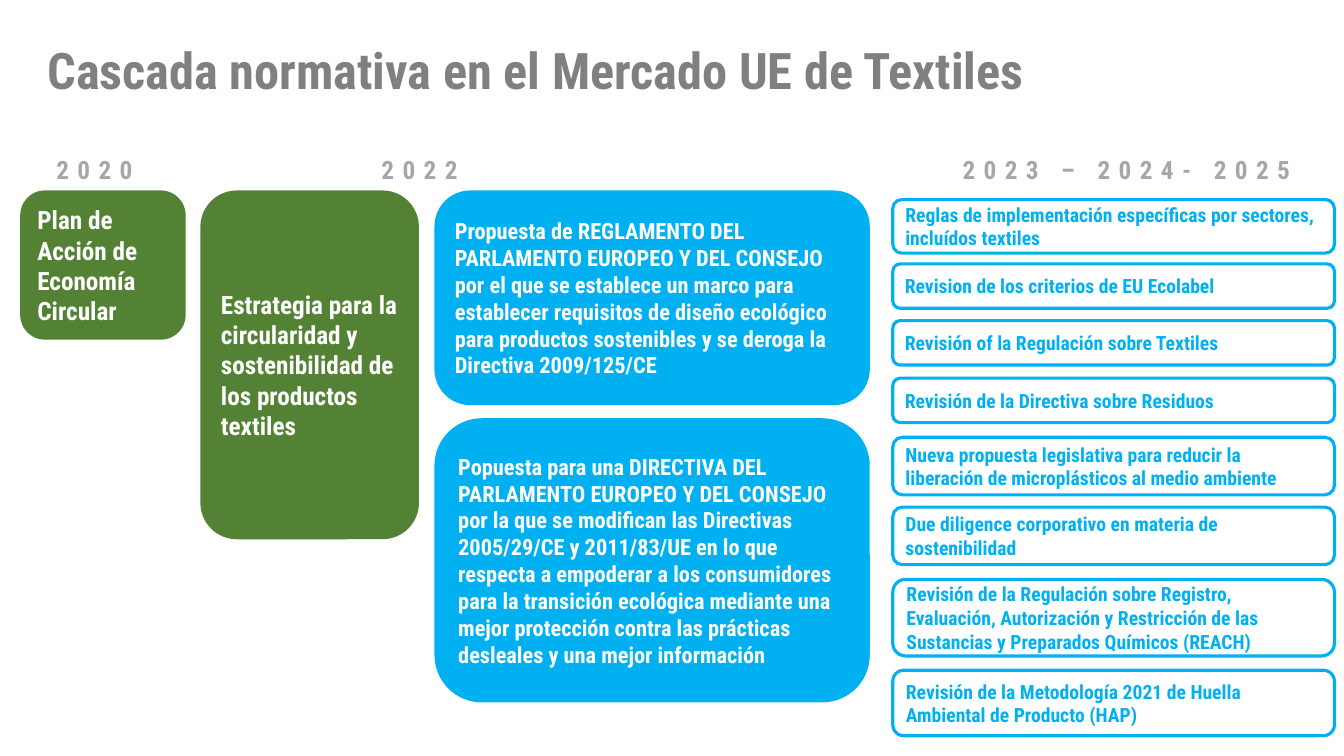
from pptx import Presentation
from pptx.dml.color import RGBColor
from pptx.enum.shapes import MSO_SHAPE as Preset
from pptx.enum.text import MSO_ANCHOR as Anchor, MSO_AUTO_SIZE as AutoSize, PP_ALIGN as Align
from pptx.util import Cm, Pt

FONT = "Roboto Condensed"
WHITE = RGBColor(0xFF, 0xFF, 0xFF)
GREEN = RGBColor(0x54, 0x82, 0x35)
BLUE = RGBColor(0x00, 0xB0, 0xF0)
TITLE_GREY = RGBColor(0x80, 0x80, 0x80)
YEAR_GREY = RGBColor(0xA6, 0xA6, 0xA6)

# Left, top, width and height in centimetres
YEARS = [
    ("2020", (1.17, 3.76, 2.87, 1.02), Align.LEFT),
    ("2022", (9.14, 3.76, 2.87, 1.02), Align.CENTER),
    ("2023 – 2024- 2025", (23.5, 3.76, 9.78, 1.02), Align.CENTER),
]
PLANS = [
    ("Plan de Acción de Economía Circular", (0.51, 4.8, 4.17, 3.76)),
    ("Estrategia para la circularidad y sostenibilidad de los productos textiles",
     (5.05, 4.8, 5.51, 8.79)),
]
PROPOSALS = [
    ("Propuesta de REGLAMENTO DEL PARLAMENTO EUROPEO Y DEL CONSEJO por el que se "
     "establece un marco para establecer requisitos de diseño ecológico para productos "
     "sostenibles y se deroga la Directiva 2009/125/CE", (10.95, 4.8, 10.97, 5.41)),
    ("Popuesta para una DIRECTIVA DEL PARLAMENTO EUROPEO Y DEL CONSEJO por la que se "
     "modifican las Directivas 2005/29/CE y 2011/83/UE en lo que respecta a empoderar a "
     "los consumidores para la transición ecológica mediante una mejor protección contra "
     "las prácticas desleales y una mejor información", (10.95, 10.54, 10.97, 7.16)),
]
# Text, top and height; all share the right-hand column
RULES_LEFT, RULES_WIDTH = 22.5, 11.13
RULES = [
    ("Reglas de implementación específicas por sectores, incluídos textiles", 5.03, 1.35),
    ("Revision de los criterios de EU Ecolabel", 6.65, 1.12),
    ("Revisión of la Regulación sobre Textiles", 8.08, 1.12),
    ("Revisión de la Directiva sobre Residuos", 9.53, 1.12),
    ("Nueva propuesta legislativa para reducir la liberación de microplásticos al medio "
     "ambiente", 11.02, 1.45),
    ("Due diligence corporativo en materia de sostenibilidad", 12.78, 1.45),
    ("Revisión de la Regulación sobre Registro, Evaluación, Autorización y Restricción de "
     "las Sustancias y Preparados Químicos (REACH)", 14.6, 1.93),
    ("Revisión de la Metodología 2021 de Huella Ambiental de Producto (HAP)", 16.89, 1.65),
]


def write(box, text, size, color, align=Align.LEFT):
    para = box.text_frame.paragraphs[0]
    para.alignment = align
    span = para.add_run()
    span.text = text
    span.font.name = FONT
    span.font.size = Pt(size)
    span.font.bold = True
    span.font.color.rgb = color
    return span


def add_title(page, text):
    title = page.shapes.title
    title.left, title.top, title.width, title.height = Cm(0.94), Cm(0.86), Cm(25.4), Cm(1.8)
    frame = title.text_frame
    frame.word_wrap = False
    frame.auto_size = AutoSize.NONE
    frame.vertical_anchor = Anchor.TOP
    write(title, text, 36, TITLE_GREY)


def add_year(page, text, place, align):
    box = page.shapes.add_textbox(*map(Cm, place))
    box.text_frame.word_wrap = True
    span = write(box, text, 18, YEAR_GREY, align)
    # Letter spacing in hundredths of a point
    span.font._element.set("spc", "600")


def add_card(page, text, place, size, fill, color, line=None):
    card = page.shapes.add_shape(Preset.ROUNDED_RECTANGLE, *map(Cm, place))
    card.shadow.inherit = False
    card.fill.solid()
    card.fill.fore_color.rgb = fill
    if line is None:
        card.line.fill.background()
    else:
        card.line.color.rgb = line
        card.line.width = Pt(2.25)
    card.text_frame.word_wrap = True
    card.text_frame.vertical_anchor = Anchor.MIDDLE
    write(card, text, size, color)


def main():
    deck = Presentation()
    deck.slide_width, deck.slide_height = Cm(33.87), Cm(19.05)
    page = deck.slides.add_slide(deck.slide_layouts.get_by_name("Title Only"))

    # Heading and timeline
    add_title(page, "Cascada normativa en el Mercado UE de Textiles")
    for text, place, align in YEARS:
        add_year(page, text, place, align)

    # Cascade, from plans to proposals to rules
    for text, place in PLANS:
        add_card(page, text, place, 18, GREEN, WHITE)
    for text, place in PROPOSALS:
        add_card(page, text, place, 16, BLUE, WHITE)
    for text, top, height in RULES:
        add_card(page, text, (RULES_LEFT, top, RULES_WIDTH, height), 14, WHITE, BLUE, BLUE)

    deck.save("out.pptx")


if __name__ == "__main__":
    main()
